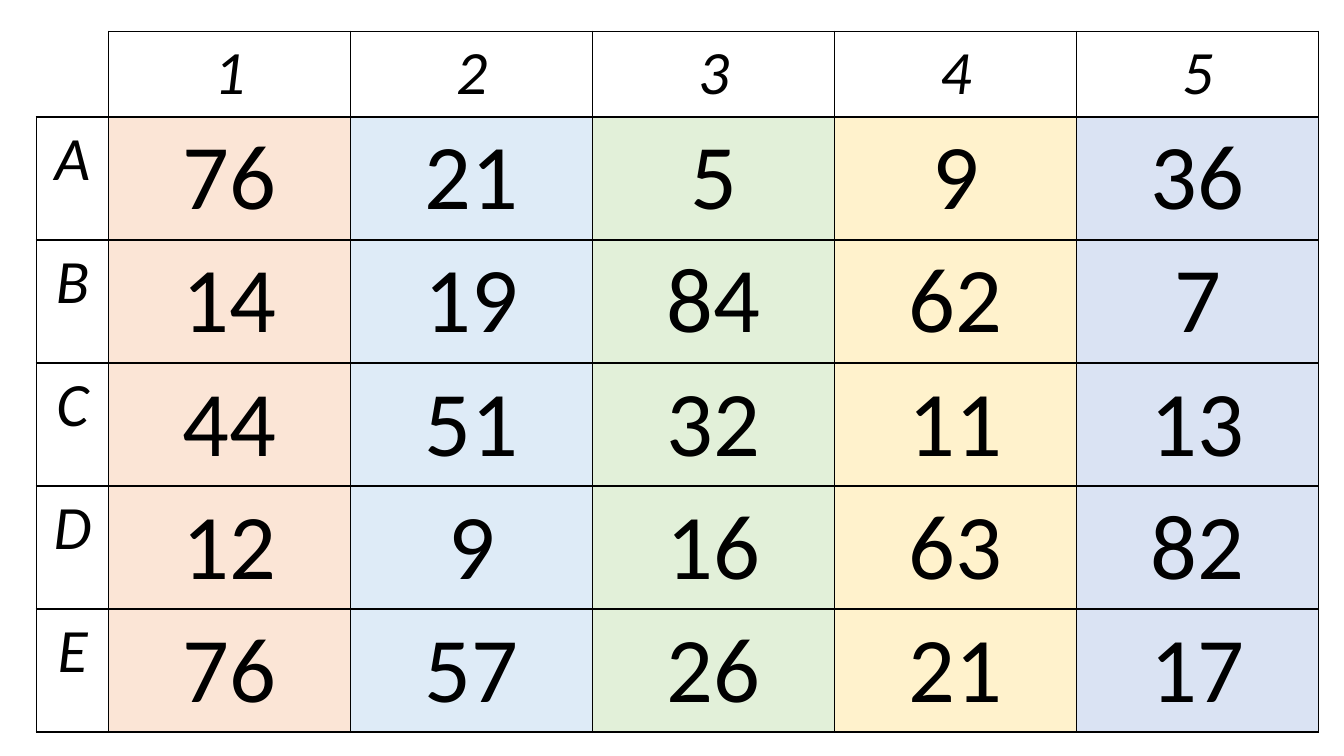
from lxml.etree import SubElement
from pptx import Presentation
from pptx.dml.color import RGBColor
from pptx.enum.text import PP_ALIGN as Align
from pptx.oxml.ns import qn
from pptx.util import Inches, Pt

HEADS = ["1", "2", "3", "4", "5"]
ROWS = {
    "A": [76, 21, 5, 9, 36],
    "B": [14, 19, 84, 62, 7],
    "C": [44, 51, 32, 11, 13],
    "D": [12, 9, 16, 63, 82],
    "E": [76, 57, 26, 21, 17],
}
TINTS = ["FBE5D6", "DEEBF7", "E2F0D9", "FFF2CC", "DAE3F3"]
BLACK = "000000"
LEFT, TOP = 0.36, 0.31
WIDTHS = [0.72] + [2.4] * len(HEADS)
HEIGHTS = [0.85] + [1.22] * len(ROWS)


def color(code):
    return RGBColor.from_string(code)


def write(cell, text, size=44, italic=True, ink=BLACK):
    para = cell.text_frame.paragraphs[0]
    para.alignment = Align.CENTER
    run = para.add_run()
    run.text = text
    run.font.name = "Calibri"
    run.font.size = Pt(size)
    run.font.bold = False
    run.font.italic = italic
    run.font.color.rgb = color(ink)


def paint(cell, tint=None):
    if tint:
        cell.fill.solid()
        cell.fill.fore_color.rgb = color(tint)
    else:
        cell.fill.background()


def border(cell, shown="LRTB"):
    props = cell._tc.get_or_add_tcPr()
    for spot, side in enumerate("LRTB"):
        line = SubElement(props, qn(f"a:ln{side}"), w=str(Pt(1)))
        if side in shown:
            fill = SubElement(line, qn("a:solidFill"))
            SubElement(fill, qn("a:srgbClr"), val=BLACK)
        else:
            SubElement(line, qn("a:noFill"))
        props.insert(spot, line)


def main():
    deck = Presentation()
    deck.slide_width, deck.slide_height = Inches(13.33), Inches(7.5)
    slide = deck.slides.add_slide(deck.slide_layouts[6])
    table = slide.shapes.add_table(
        len(HEIGHTS), len(WIDTHS), Inches(LEFT), Inches(TOP),
        Inches(sum(WIDTHS)), Inches(sum(HEIGHTS)),
    ).table
    table.first_row = table.horz_banding = False
    for col, width in zip(table.columns, WIDTHS):
        col.width = Inches(width)
    for row, height in zip(table.rows, HEIGHTS):
        row.height = Inches(height)

    corner = table.cell(0, 0)
    for cell in table.iter_cells():
        paint(cell)
        border(cell, "RB" if cell == corner else "LRTB")
    for c, head in enumerate(HEADS, 1):
        write(table.cell(0, c), head)
    for r, (label, values) in enumerate(ROWS.items(), 1):
        write(table.cell(r, 0), label)
        for c, (value, tint) in enumerate(zip(values, TINTS), 1):
            cell = table.cell(r, c)
            write(cell, str(value), size=66, italic=False)
            paint(cell, tint)

    deck.save("out.pptx")


if __name__ == "__main__":
    main()
